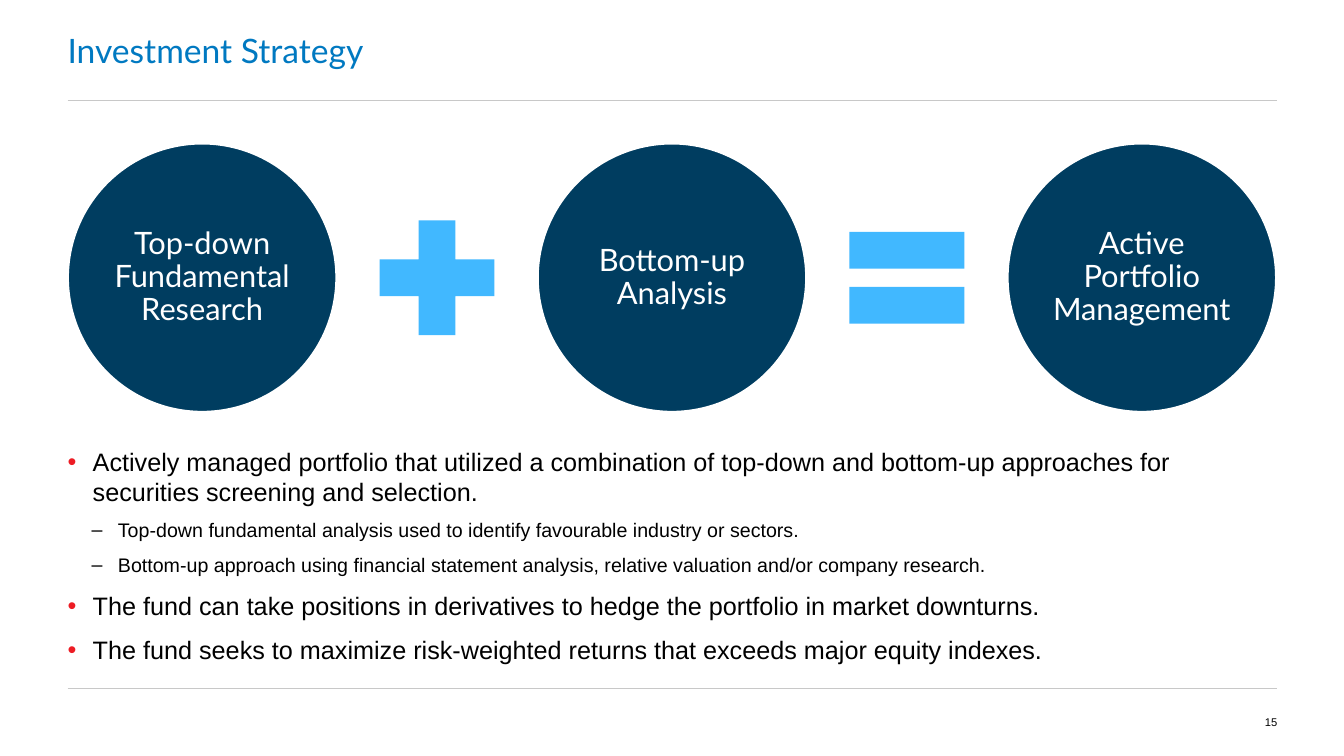
"""Build the Investment Strategy slide."""
from dataclasses import dataclass

from lxml.etree import SubElement
from pptx import Presentation
from pptx.dml.color import RGBColor
from pptx.enum.shapes import MSO_CONNECTOR, MSO_SHAPE
from pptx.enum.text import MSO_ANCHOR, PP_ALIGN
from pptx.oxml.ns import qn
from pptx.util import Inches, Pt


@dataclass(frozen=True)
class Theme:
    title: str = "0079C1"
    circle: str = "003D60"
    operator: str = "41B8FF"
    rule: str = "C8C8C8"
    bullet: str = "ED1C24"
    white: str = "FFFFFF"
    black: str = "000000"
    heading_font: str = "Lato"
    body_font: str = "Arial"
    title_size: int = 24
    circle_size: int = 22
    body_size: int = 18
    sub_size: int = 14
    number_size: int = 8


THEME = Theme()
MARGIN, CONTENT_WIDTH = 0.67, 12
RULE_TOP, RULE_BOTTOM = 1, 6.83
CIRCLE_TOP, CIRCLE_SIZE, CIRCLE_PITCH = 1.42, 2.67, 4.66
OPERATOR_SIZE = 1.55
CIRCLES = ["Top-down Fundamental Research", "Bottom-up Analysis", "Active Portfolio Management"]
OPERATORS = [MSO_SHAPE.MATH_PLUS, MSO_SHAPE.MATH_EQUAL]
BULLETS = [
    (0, "Actively managed portfolio that utilized a combination of top-down and bottom-up "
        "approaches for securities screening and selection."),
    (1, "Top-down fundamental analysis used to identify favourable industry or sectors."),
    (1, "Bottom-up approach using financial statement analysis, relative valuation and/or "
        "company research."),
    (0, "The fund can take positions in derivatives to hedge the portfolio in market downturns."),
    (0, "The fund seeks to maximize risk-weighted returns that exceeds major equity indexes."),
]


def style_font(para, name, size, color):
    """Set the typeface, size and colour of every run in a paragraph."""
    for span in para.runs:
        span.font.name = name
        span.font.size = Pt(size)
        span.font.color.rgb = RGBColor.from_string(color)


def set_frame(frame, inset, anchor):
    """Wrap a text frame with equal insets and a vertical anchor."""
    frame.word_wrap = True
    frame.vertical_anchor = anchor
    frame.margin_left = frame.margin_right = Inches(inset)
    frame.margin_top = frame.margin_bottom = Inches(inset)


def add_text_box(page, left, top, width, height, anchor=MSO_ANCHOR.MIDDLE):
    """Add a text box without insets and return its text frame."""
    box = page.shapes.add_textbox(Inches(left), Inches(top), Inches(width), Inches(height))
    set_frame(box.text_frame, 0, anchor)
    return box.text_frame


def add_label(page, text, bounds, align, name, size, color):
    """Add one line of text in its own box."""
    frame = add_text_box(page, *bounds)
    frame.text = text
    para = frame.paragraphs[0]
    para.alignment = align
    style_font(para, name, size, color)


def add_rule(page, top):
    """Add a thin horizontal line across the content width."""
    rule = page.shapes.add_connector(
        MSO_CONNECTOR.STRAIGHT, Inches(MARGIN), Inches(top),
        Inches(MARGIN + CONTENT_WIDTH), Inches(top))
    rule.line.color.rgb = RGBColor.from_string(THEME.rule)
    rule.line.width = Pt(0.75)
    SubElement(rule.element.spPr, qn("a:effectLst"))


def add_square_shape(page, kind, left, top, size, fill):
    """Add a filled preset shape of equal width and height."""
    shape = page.shapes.add_shape(kind, Inches(left), Inches(top), Inches(size), Inches(size))
    shape.shadow.inherit = False
    shape.fill.solid()
    shape.fill.fore_color.rgb = RGBColor.from_string(fill)
    shape.line.fill.background()
    return shape


def add_circle(page, left, text):
    """Add a labelled circle with a white outline."""
    circle = add_square_shape(page, MSO_SHAPE.OVAL, left, CIRCLE_TOP, CIRCLE_SIZE, THEME.circle)
    circle.line.color.rgb = RGBColor.from_string(THEME.white)
    circle.line.width = Pt(2)
    set_frame(circle.text_frame, 0.03, MSO_ANCHOR.MIDDLE)
    circle.text_frame.text = text
    para = circle.text_frame.paragraphs[0]
    para.alignment = PP_ALIGN.CENTER
    para.line_spacing = 0.9
    style_font(para, THEME.heading_font, THEME.circle_size, THEME.white)


def add_equation(page):
    """Lay out the circles at equal pitch with an operator in each gap."""
    for index, text in enumerate(CIRCLES):
        add_circle(page, MARGIN + index * CIRCLE_PITCH, text)
    gap = CIRCLE_PITCH - CIRCLE_SIZE
    first_left = MARGIN + CIRCLE_SIZE + (gap - OPERATOR_SIZE) / 2
    top = CIRCLE_TOP + (CIRCLE_SIZE - OPERATOR_SIZE) / 2
    for index, kind in enumerate(OPERATORS):
        add_square_shape(page, kind, first_left + index * CIRCLE_PITCH, top,
                         OPERATOR_SIZE, THEME.operator)


def set_bullet(para, level):
    """Give a paragraph the hanging bullet of its level."""
    para.level = level
    props = para._p.get_or_add_pPr()
    props.set("marL", str(Inches(0.25 * (level + 1))))
    props.set("indent", str(Inches(-0.26 if level else -0.25)))
    if not level:
        color = SubElement(props, qn("a:buClr"))
        SubElement(color, qn("a:srgbClr"), val=THEME.bullet)
    SubElement(props, qn("a:buFont"), typeface=THEME.body_font)
    SubElement(props, qn("a:buChar"), char="–" if level else "•")


def add_bullets(page):
    """Add the two-level list below the circles."""
    frame = add_text_box(page, MARGIN, 4.43, CONTENT_WIDTH, 2.3, MSO_ANCHOR.TOP)
    for index, (level, text) in enumerate(BULLETS):
        para = frame.add_paragraph() if index else frame.paragraphs[0]
        para.text = text
        set_bullet(para, level)
        if index:
            para.space_before = Pt(8 if level else 10)
        size = THEME.sub_size if level else THEME.body_size
        style_font(para, THEME.body_font, size, THEME.black)


def main():
    """Build and save the deck."""
    deck = Presentation()
    deck.slide_width, deck.slide_height = Inches(13.33), Inches(7.5)
    page = deck.slides.add_slide(deck.slide_layouts[6])
    for top in (RULE_TOP, RULE_BOTTOM):
        add_rule(page, top)
    add_label(page, "Investment Strategy", (MARGIN, 0, CONTENT_WIDTH, RULE_TOP),
              PP_ALIGN.LEFT, THEME.heading_font, THEME.title_size, THEME.title)
    add_equation(page)
    add_bullets(page)
    add_label(page, "15", (12, RULE_BOTTOM, 0.67, 0.67),
              PP_ALIGN.RIGHT, THEME.body_font, THEME.number_size, THEME.black)
    deck.save("out.pptx")


if __name__ == "__main__":
    main()
